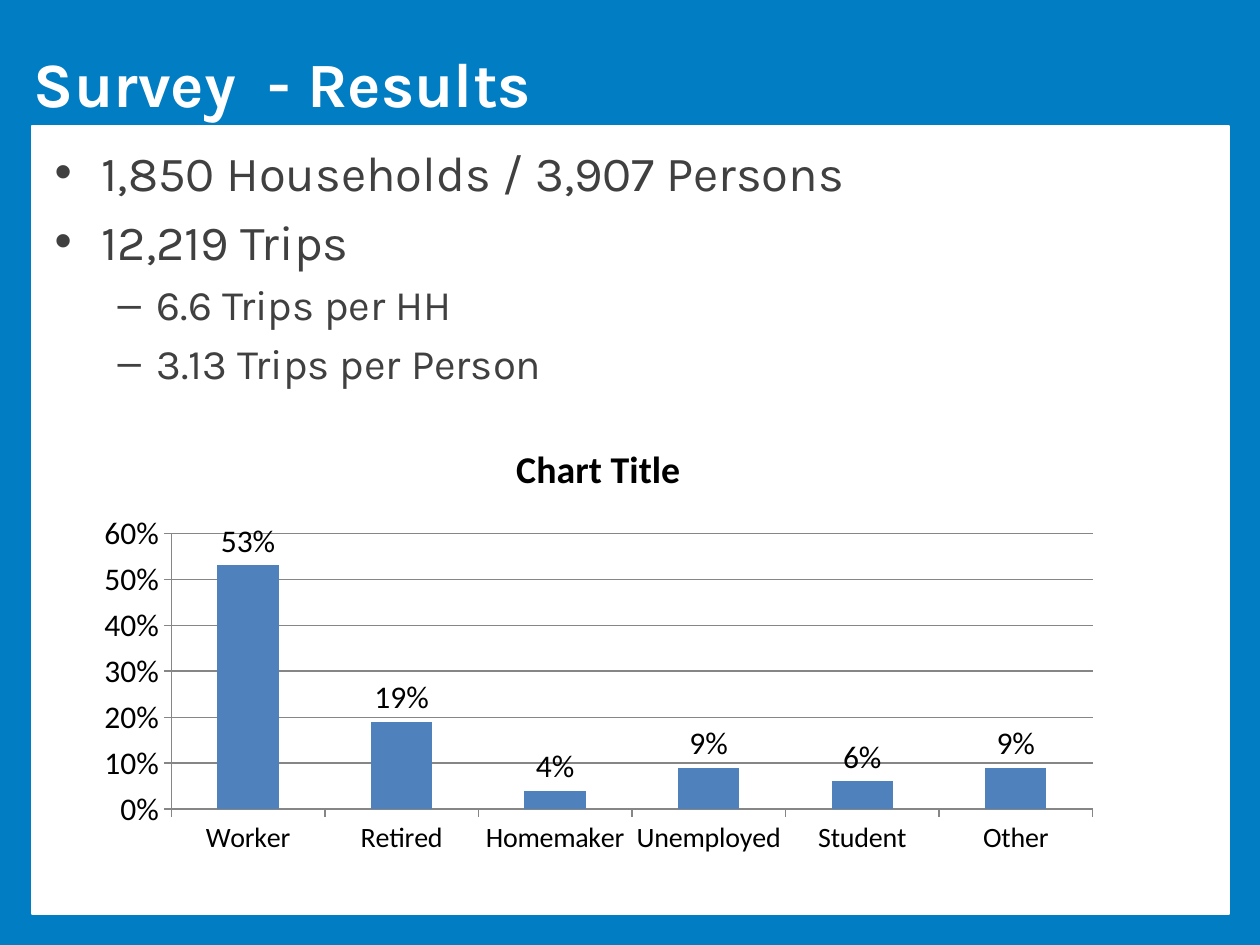
import pptx
import pptx.chart.data
import pptx.dml.color
import pptx.enum.chart
import pptx.enum.shapes
import pptx.enum.text
import pptx.oxml
import pptx.oxml.ns
import pptx.util
from pptx.util import Cm

COLORS = {"blue": "007DC3", "white": "FFFFFF", "text": "404040", "axis": "868686",
          "black": "000000", "Series 1": "4F81BD", "Series 2": "C0504D",
          "Series 3": "9BBB59"}


def rgb(name):
    return pptx.dml.color.RGBColor.from_string(COLORS[name])


def set_font(font, color, **values):
    for name, value in values.items():
        setattr(font, name, value)
    font.color.rgb = rgb(color)


presentation = pptx.Presentation()
presentation.slide_width, presentation.slide_height = Cm(25.4), Cm(19.05)
slide = presentation.slides.add_slide(presentation.slide_layouts[5])
title = slide.shapes.title

backdrops = [("blue", 0, 0, 25.4, 19.05), ("white", 0.64, 2.54, 24.13, 15.88)]
for color, *box in backdrops:
    shape = slide.shapes.add_shape(
        pptx.enum.shapes.MSO_SHAPE.RECTANGLE, *map(Cm, box))
    shape.shadow.inherit = False
    shape.fill.solid()
    shape.fill.fore_color.rgb = rgb(color)
    shape.line.color.rgb = rgb(color)
    shape.line.width = pptx.util.Pt(1)
    title._element.addprevious(shape._element)

title_format = {"left": Cm(0.43), "top": Cm(0.76), "width": Cm(24.56), "height": Cm(1.78)}
for name, value in title_format.items():
    setattr(title, name, value)
title.text_frame.text = "Survey  - Results"
title.text_frame.vertical_anchor = pptx.enum.text.MSO_ANCHOR.MIDDLE
paragraph = title.text_frame.paragraphs[0]
paragraph.alignment = pptx.enum.text.PP_ALIGN.LEFT
set_font(paragraph.font, "white", name="Karla", size=pptx.util.Pt(36), bold=True)

body = slide.shapes.add_textbox(Cm(0.85), Cm(2.75), Cm(23.7), Cm(15.44))
body.text_frame.word_wrap = True
levels = [
    {"bullet": "•", "margin": 0.95, "hang": 0.95, "size": 28},
    {"bullet": "–", "margin": 2.06, "hang": 0.79, "size": 24},
]
findings = [
    (0, "1,850 Households / 3,907 Persons"),
    (0, "12,219 Trips"),
    (1, "6.6 Trips per HH"),
    (1, "3.13 Trips per Person"),
]
for index, (level, text) in enumerate(findings):
    style = levels[level]
    paragraph = body.text_frame.paragraphs[0] if index == 0 else body.text_frame.add_paragraph()
    paragraph.text = text
    paragraph.level = level
    if index > 0:
        paragraph.space_before = pptx.util.Pt(style["size"] * 0.2)
    properties = paragraph._element.get_or_add_pPr()
    properties.set("marL", str(Cm(style["margin"])))
    properties.set("indent", str(-Cm(style["hang"])))
    for tag, attribute, value in [("a:buFont", "typeface", "Arial"),
                                  ("a:buChar", "char", style["bullet"])]:
        element = pptx.oxml.parse_xml(f"<{tag} {pptx.oxml.ns.nsdecls('a')}/>")
        element.set(attribute, value)
        properties.append(element)
    set_font(paragraph.font, "text", name="Karla", size=pptx.util.Pt(style["size"]))

chart_data = pptx.chart.data.CategoryChartData(number_format="0%")
chart_data.categories = ["Worker", "Retired", "Homemaker", "Unemployed", "Student", "Other"]
chart_data.add_series("Series 1", [0.53, 0.19, 0.04, 0.09, 0.06, 0.09])
chart_data.add_series("Series 2", [])
chart_data.add_series("Series 3", [])
chart = slide.shapes.add_chart(
    pptx.enum.chart.XL_CHART_TYPE.COLUMN_CLUSTERED,
    Cm(1.69), Cm(8.46), Cm(20.75), Cm(8.97), chart_data).chart
set_font(chart.font, "black", name="Calibri", size=pptx.util.Pt(18))
chart.has_legend = False
chart.has_title = True
chart.chart_title.text_frame.text = "Chart Title"
set_font(chart.chart_title.text_frame.paragraphs[0].font, "black",
         name="Calibri", size=pptx.util.Pt(21.6), bold=True)

plot = chart.plots[0]
plot.gap_width = 150
plot.vary_by_categories = False
for series in plot.series:
    series.format.fill.solid()
    series.format.fill.fore_color.rgb = rgb(series.name)
label_format = {"show_value": True, "number_format": "0%", "number_format_is_linked": False,
                "position": pptx.enum.chart.XL_LABEL_POSITION.OUTSIDE_END}
for name, value in label_format.items():
    setattr(plot.series[0].data_labels, name, value)

value_format = {"minimum_scale": 0, "maximum_scale": 0.6, "major_unit": 0.1,
                "has_major_gridlines": True}
for name, value in value_format.items():
    setattr(chart.value_axis, name, value)
chart.value_axis.tick_labels.number_format = "0%"
chart.value_axis.tick_labels.number_format_is_linked = False
chart.category_axis.tick_labels.font.size = pptx.util.Pt(16)
for line in (chart.value_axis.format.line, chart.category_axis.format.line,
             chart.value_axis.major_gridlines.format.line):
    line.color.rgb = rgb("axis")
    line.width = pptx.util.Pt(0.75)

presentation.save("out.pptx")
